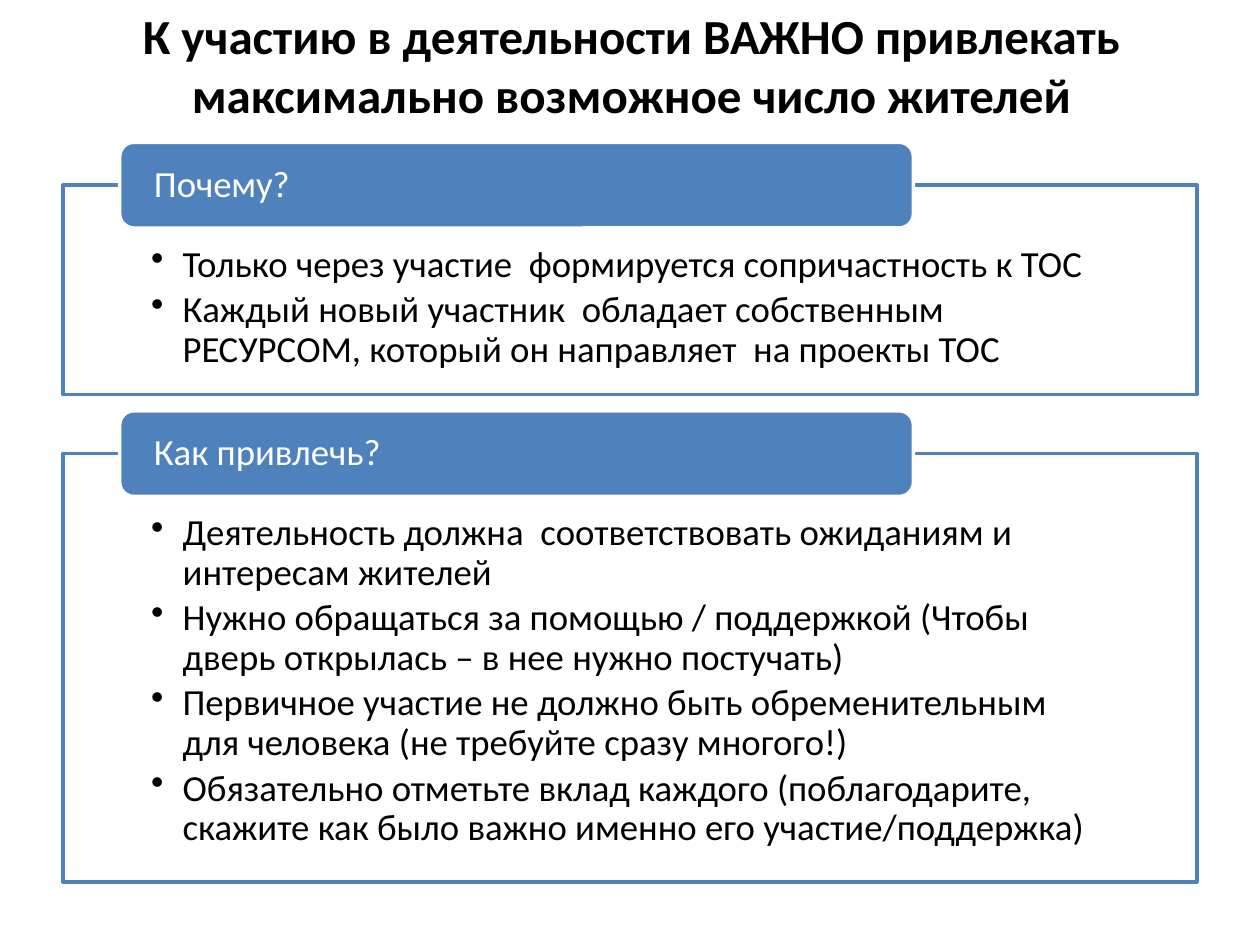
import pptx
import pptx.dml.color
import pptx.enum.shapes
import pptx.enum.text
import pptx.oxml
import pptx.oxml.ns
import pptx.util

Pt = pptx.util.Pt
RGBColor = pptx.dml.color.RGBColor
SHAPE = pptx.enum.shapes.MSO_SHAPE
ANCHOR = pptx.enum.text.MSO_ANCHOR
ALIGN = pptx.enum.text.PP_ALIGN

BLUE = RGBColor(0x4F, 0x81, 0xBD)
WHITE = RGBColor(0xFF, 0xFF, 0xFF)
BLACK = RGBColor(0, 0, 0)
FONT = "Calibri"
HEADER_HEIGHT = 49
BULLET_INDENT = 18

TITLE = "К участию в деятельности ВАЖНО привлекать максимально возможное число жителей"
SECTIONS = [
    ((36, 105.8, 648, 119.7), "Почему?", [
        "Только через участие  формируется сопричастность к ТОС",
        "Каждый новый участник  обладает собственным РЕСУРСОМ, который он направляет  на проекты ТОС",
    ]),
    ((36, 259.2, 648, 244.8), "Как привлечь?", [
        "Деятельность должна  соответствовать ожиданиям и интересам жителей",
        "Нужно обращаться за помощью / поддержкой (Чтобы дверь открылась – в нее нужно постучать)",
        "Первичное участие не должно быть обременительным для человека (не требуйте сразу многого!)",
        "Обязательно отметьте вклад каждого (поблагодарите, скажите как было важно именно его участие/поддержка)",
    ]),
]


def set_attributes(target, values):
    for name, value in values.items():
        setattr(target, name, value)


def write_lines(tf, lines, size, color, align, bold=False, **spacing):
    for i, line in enumerate(lines):
        p = tf.add_paragraph() if i else tf.paragraphs[0]
        set_attributes(p, {"alignment": align, **spacing})
        r = p.add_run()
        r.text = line
        set_attributes(r.font, {"name": FONT, "size": Pt(size), "bold": bold})
        r.font.color.rgb = color


def set_insets(tf, left, top, right, bottom):
    set_attributes(tf, {
        "margin_left": Pt(left), "margin_top": Pt(top),
        "margin_right": Pt(right), "margin_bottom": Pt(bottom),
        "word_wrap": True,
    })


def add_bullet(p):
    pPr = p._p.get_or_add_pPr()
    pPr.set("marL", str(Pt(BULLET_INDENT)))
    pPr.set("indent", str(-Pt(BULLET_INDENT)))
    bullet = pptx.oxml.parse_xml(
        f'<a:buChar {pptx.oxml.ns.nsdecls("a")} char="•"/>')
    pPr.append(bullet)


def add_panel(s, kind, box, fill, line):
    sp = s.shapes.add_shape(kind, *map(Pt, box))
    sp.shadow.inherit = False
    sp.fill.solid()
    sp.fill.fore_color.rgb = fill
    sp.line.color.rgb = line
    sp.line.width = Pt(2)
    return sp


def add_title(s, box):
    sp = s.shapes.title
    set_attributes(sp, dict(zip(("left", "top", "width", "height"), map(Pt, box))))
    tf = sp.text_frame
    # The deep bottom inset lifts the text clear of the first header.
    set_insets(tf, 7.2, 3.6, 7.2, 34)
    set_attributes(tf, {"vertical_anchor": ANCHOR.MIDDLE,
                        "auto_size": pptx.enum.text.MSO_AUTO_SIZE.NONE})
    write_lines(tf, [TITLE], 28, BLACK, ALIGN.CENTER, bold=True)


def add_section(s, box, heading, items):
    """Framed bullet list with a header straddling the top edge of its box."""
    left, top, width, height = box
    frame = add_panel(s, SHAPE.RECTANGLE, box, WHITE, BLUE)
    color = frame.fill._xPr.find(".//" + pptx.oxml.ns.qn("a:srgbClr"))
    color.append(pptx.oxml.parse_xml(
        f'<a:alpha {pptx.oxml.ns.nsdecls("a")} val="90000"/>'))
    tf = frame.text_frame
    set_insets(tf, 50.4, 34.5, 50.4, 11.5)
    tf.vertical_anchor = ANCHOR.TOP
    write_lines(tf, items, 21, BLACK, ALIGN.LEFT,
                line_spacing=0.9, space_after=Pt(3.3))
    for p in tf.paragraphs:
        add_bullet(p)

    header_box = (left + 0.05 * width, top - HEADER_HEIGHT / 2,
                  0.7 * width, HEADER_HEIGHT)
    header = add_panel(s, SHAPE.ROUNDED_RECTANGLE, header_box, BLUE, WHITE)
    tf = header.text_frame
    set_insets(tf, 17.2, 0, 17.2, 0)
    tf.vertical_anchor = ANCHOR.MIDDLE
    write_lines(tf, [heading], 21, WHITE, ALIGN.LEFT, line_spacing=0.9)


def main():
    prs = pptx.Presentation()
    prs.slide_width, prs.slide_height = Pt(720), Pt(540)
    s = prs.slides.add_slide(prs.slide_layouts[5])
    add_title(s, (36.7, 20.9, 648, 61.9))
    for box, heading, items in SECTIONS:
        add_section(s, box, heading, items)
    prs.save("out.pptx")


if __name__ == "__main__":
    main()
